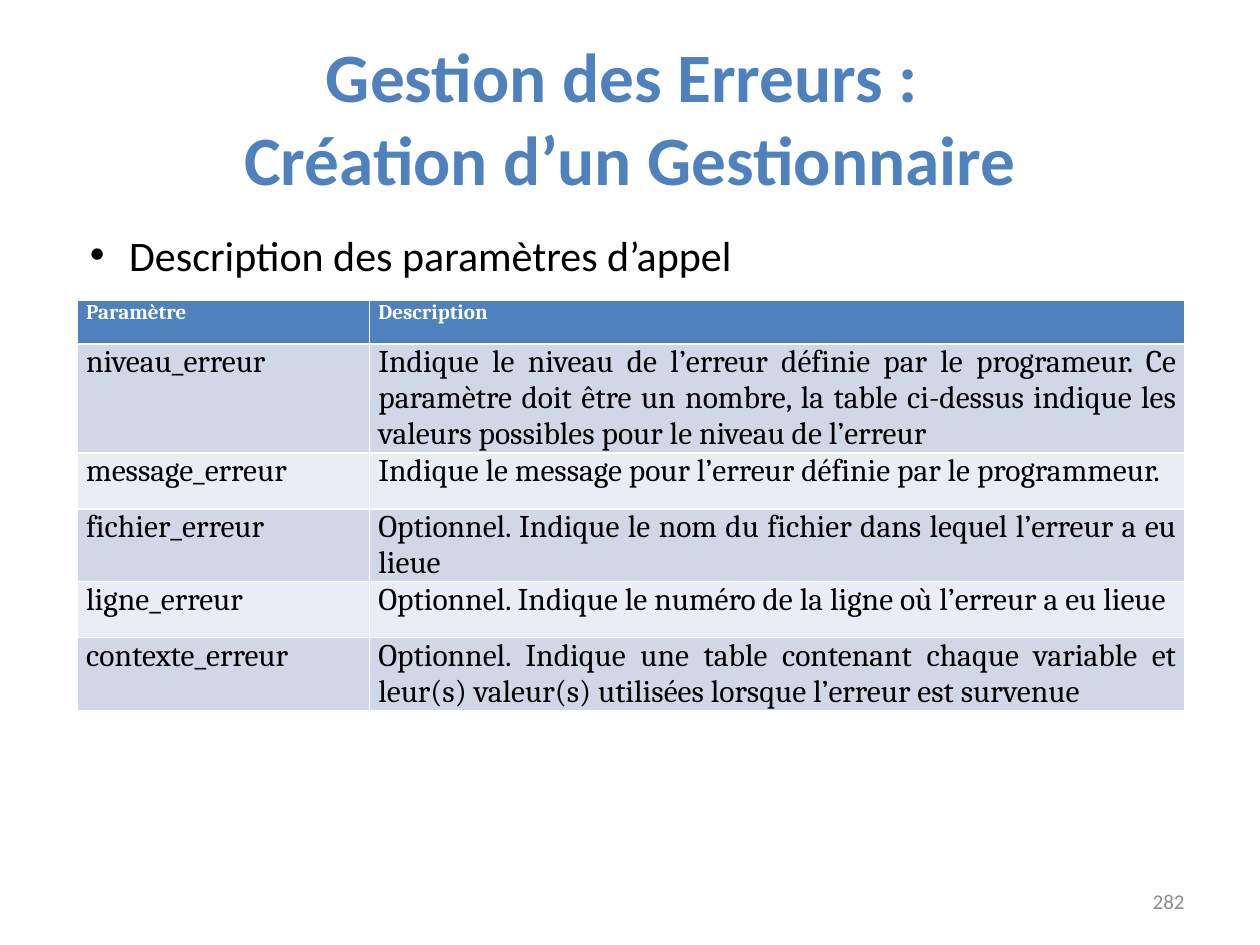
from lxml import etree
from pptx import Presentation
from pptx.dml.color import RGBColor
from pptx.enum.text import MSO_ANCHOR, PP_ALIGN
from pptx.oxml.ns import qn
from pptx.util import Pt

MIDDLE = MSO_ANCHOR.MIDDLE
CENTER, RIGHT, JUSTIFY = PP_ALIGN.CENTER, PP_ALIGN.RIGHT, PP_ALIGN.JUSTIFY

COLORS = {
    "accent": "4F81BD",
    "white": "FFFFFF",
    "black": "000000",
    "gray": "8C8C8C",
    "band_dark": "D0D8E8",
    "band_light": "E9EDF4",
}
TITLE = ["Gestion des Erreurs : ", "Création d’un Gestionnaire"]
BULLET = "Description des paramètres d’appel"
PAGE = "282"
ROWS = [
    ("Paramètre", "Description"),
    ("niveau_erreur", "Indique le niveau de l’erreur définie par le programeur. "
     "Ce paramètre doit être un nombre, la table ci-dessus indique les valeurs "
     "possibles pour le niveau de l’erreur "),
    ("message_erreur", "Indique le message pour l’erreur définie par le programmeur. "),
    ("fichier_erreur", "Optionnel. Indique le nom du fichier dans lequel l’erreur a eu lieue"),
    ("ligne_erreur", "Optionnel. Indique le numéro de la ligne où l’erreur a eu lieue"),
    ("contexte_erreur", "Optionnel. Indique une table contenant chaque variable et "
     "leur(s) valeur(s) utilisées lorsque l’erreur est survenue "),
]
COL_WIDTHS = [167, 466]
ROW_HEIGHTS = [25, 42.5, 32, 37, 32, 40]
TABLE_LEFT, TABLE_TOP = 44.25, 171.5


def add_run(p, text, size, color, font="Calibri", bold=False):
    r = p.add_run()
    r.text = text
    r.font.size = Pt(size)
    r.font.name = font
    r.font.bold = bold
    r.font.color.rgb = RGBColor.from_string(COLORS[color])


def add_text_box(s, left, top, width, height):
    tf = s.shapes.add_textbox(Pt(left), Pt(top), Pt(width), Pt(height)).text_frame
    tf.word_wrap = True
    return tf


def add_title(s):
    sp = s.shapes.title
    sp.left, sp.top, sp.width, sp.height = Pt(36), Pt(21.6), Pt(648), Pt(90)
    sp.text_frame.vertical_anchor = MIDDLE
    p = sp.text_frame.paragraphs[0]
    p.alignment = CENTER
    for i, line in enumerate(TITLE):
        if i:
            p.add_line_break()
        add_run(p, line, 39.6, "accent", bold=True)


def add_bullet(s):
    p = add_text_box(s, 44.25, 127.5, 626, 36).paragraphs[0]
    pPr = p._p.get_or_add_pPr()
    pPr.set("marL", str(Pt(22.5)))
    pPr.set("indent", str(-Pt(22.5)))
    etree.SubElement(pPr, qn("a:buFont")).set("typeface", "Arial")
    etree.SubElement(pPr, qn("a:buChar")).set("char", "•")
    add_run(p, BULLET, 24, "black")


def add_parameter_table(s):
    table = s.shapes.add_table(
        len(ROWS), len(COL_WIDTHS), Pt(TABLE_LEFT), Pt(TABLE_TOP),
        Pt(sum(COL_WIDTHS)), Pt(sum(ROW_HEIGHTS))).table
    for column, width in zip(table.columns, COL_WIDTHS):
        column.width = Pt(width)
    for i, (texts, height) in enumerate(zip(ROWS, ROW_HEIGHTS)):
        table.rows[i].height = Pt(height)
        header = i == 0
        band = "accent" if header else "band_dark" if i % 2 else "band_light"
        for cell, text in zip(table.rows[i].cells, texts):
            cell.margin_left = cell.margin_right = Pt(5)
            cell.margin_top = cell.margin_bottom = 0
            cell.fill.solid()
            cell.fill.fore_color.rgb = RGBColor.from_string(COLORS[band])
            p = cell.text_frame.paragraphs[0]
            p.alignment = JUSTIFY
            add_run(p, text, 12 if header else 18,
                    "white" if header else "black", "Cambria", header)


def add_page_number(s):
    tf = add_text_box(s, 516, 500.5, 168, 28.75)
    tf.vertical_anchor = MIDDLE
    p = tf.paragraphs[0]
    p.alignment = RIGHT
    add_run(p, PAGE, 12, "gray")


def main():
    prs = Presentation()
    prs.slide_width, prs.slide_height = Pt(720), Pt(540)
    s = prs.slides.add_slide(prs.slide_layouts[5])
    add_title(s)
    add_parameter_table(s)
    add_page_number(s)
    add_bullet(s)
    prs.save("out.pptx")


if __name__ == "__main__":
    main()
